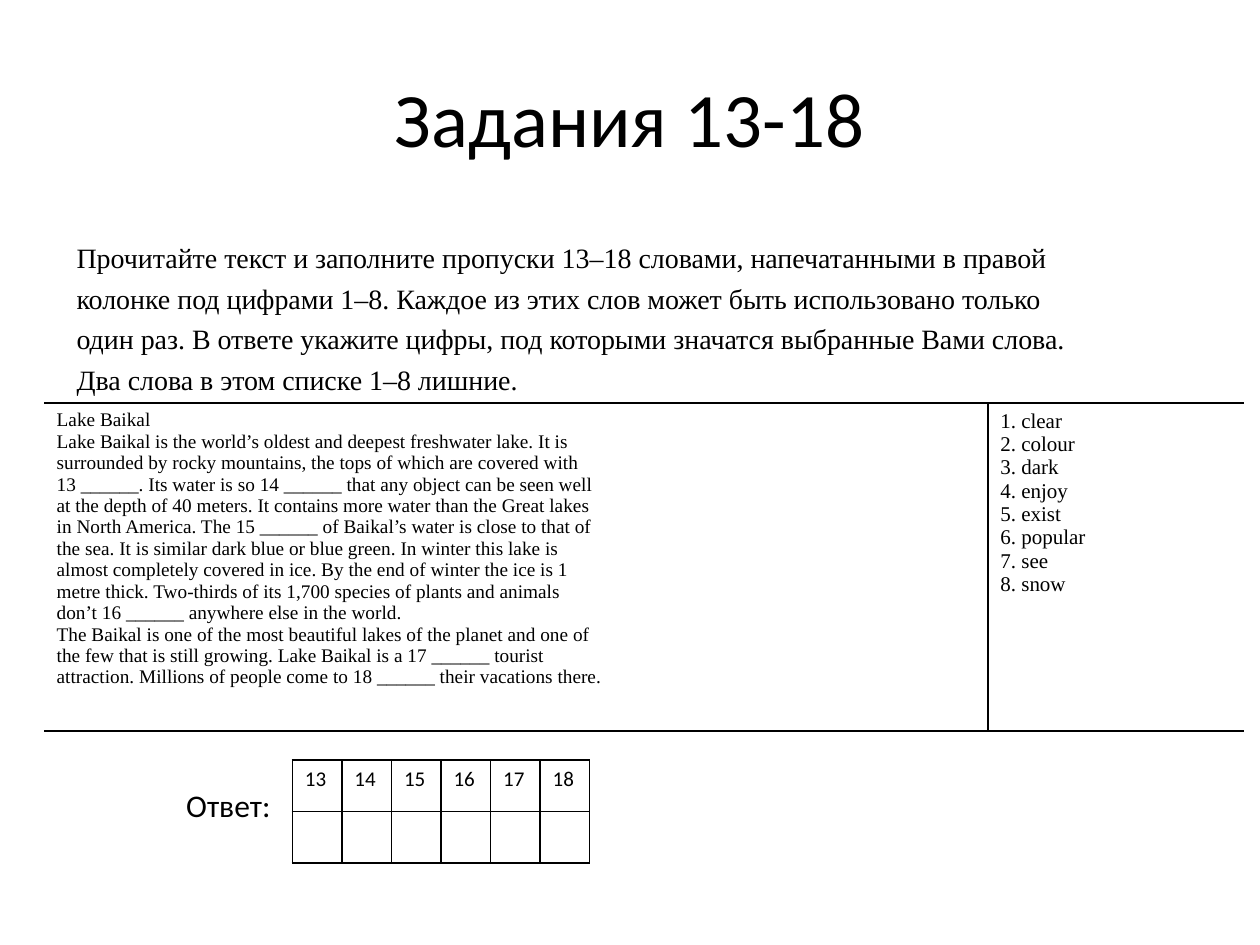
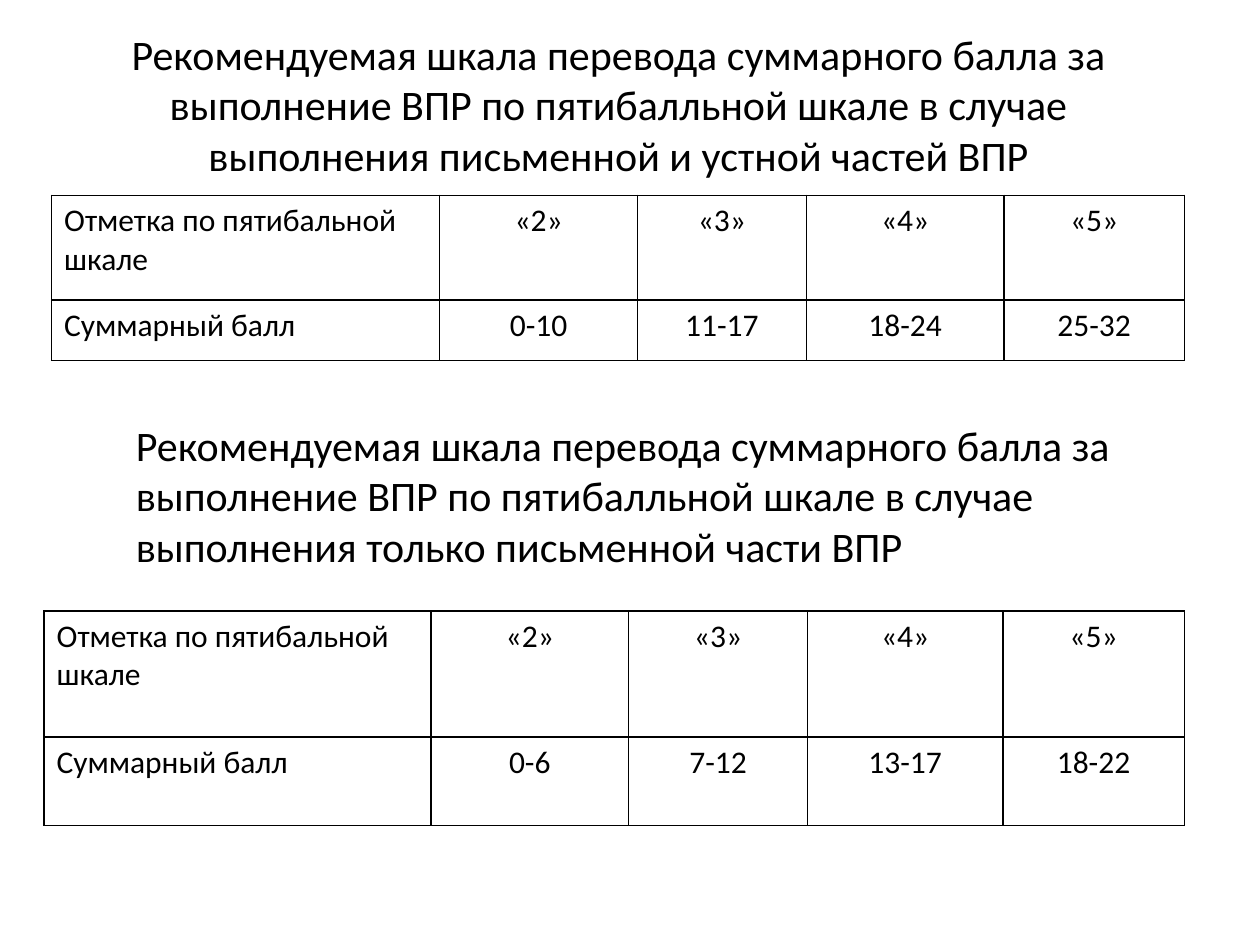
from dataclasses import dataclass
from lxml.etree import SubElement as Sub
from pptx import Presentation
from pptx.dml.color import RGBColor as Rgb
from pptx.enum.text import MSO_ANCHOR as Anchor, PP_ALIGN as Align
from pptx.oxml.ns import qn
from pptx.util import Inches, Pt


@dataclass(frozen=True)
class Theme:
    ink: str = "000000"
    sans: str = "Calibri"
    serif: str = "Times New Roman"
    title: int = 44
    head: int = 24
    label: int = 18
    task: int = 16
    word: int = 12
    story: int = 11
    line: int = 1


THEME = Theme()

TASK = """Прочитайте текст и заполните пропуски 13–18 словами, напечатанными в правой
колонке под цифрами 1–8. Каждое из этих слов может быть использовано только
один раз. В ответе укажите цифры, под которыми значатся выбранные Вами слова.
Два слова в этом списке 1–8 лишние."""

STORY = [
    "Lake Baikal",
    "Lake Baikal is the world’s oldest and deepest freshwater lake. It is",
    "surrounded by rocky mountains, the tops of which are covered with",
    "13 ______. Its water is so 14 ______ that any object can be seen well",
    "at the depth of 40 meters. It contains more water than the Great lakes",
    "in North America. The 15 ______ of Baikal’s water is close to that of",
    "the sea. It is similar dark blue or blue green. In winter this lake is",
    "almost completely covered in ice. By the end of winter the ice is 1",
    "metre thick. Two-thirds of its 1,700 species of plants and animals",
    "don’t 16 ______ anywhere else in the world.",
    "The Baikal is one of the most beautiful lakes of the planet and one of",
    "the few that is still growing. Lake Baikal is a 17 ______ tourist",
    "attraction. Millions of people come to 18 ______ their vacations there.",
]

WORDS = ["clear", "colour", "dark", "enjoy", "exist", "popular", "see", "snow"]
SCALE = ("Рекомендуемая шкала перевода суммарного балла за выполнение ВПР "
         "по пятибалльной шкале в случае выполнения ")


def write(frame, text, size=THEME.label, font=THEME.sans, align=None, gap=0):
    for i, line in enumerate(text.split("\n")):
        para = frame.paragraphs[0] if i == 0 else frame.add_paragraph()
        para.alignment = align
        para.space_before = Pt(gap)
        run = para.add_run()
        run.text = line
        run.font.size = Pt(size)
        run.font.name = font
        run.font.color.rgb = Rgb.from_string(THEME.ink)


class Deck:
    def __init__(self, theme):
        self.theme = theme
        self.prs = Presentation()
        self.prs.slide_width = Inches(10)
        self.prs.slide_height = Inches(7.5)
        self.slide = None

    def page(self):
        self.slide = self.prs.slides.add_slide(self.prs.slide_layouts[6])

    def text(self, box, text, anchor=Anchor.TOP, foot=0.05, **style):
        frame = self.slide.shapes.add_textbox(*map(Inches, box)).text_frame
        frame.word_wrap = True
        frame.vertical_anchor = anchor
        frame.margin_bottom = Inches(foot)
        write(frame, text, **style)

    def title(self, box, text, **style):
        self.text(box, text, anchor=Anchor.MIDDLE, align=Align.CENTER, **style)

    def table(self, left, top, cols, rows):
        area = map(Inches, (left, top, sum(cols), sum(rows)))
        grid = self.slide.shapes.add_table(len(rows), len(cols), *area).table
        grid.first_row = grid.horz_banding = False
        for col, width in zip(grid.columns, cols):
            col.width = Inches(width)
        for row, height in zip(grid.rows, rows):
            row.height = Inches(height)
        return grid

    def edge(self, cell, sides="LRTB"):
        props = cell._tc.get_or_add_tcPr()
        for side in "LRTB":
            line = Sub(props, qn(f"a:ln{side}"), w=str(Pt(self.theme.line)))
            if side in sides:
                fill = Sub(line, qn("a:solidFill"))
                Sub(fill, qn("a:srgbClr"), val=self.theme.ink)
            else:
                Sub(line, qn("a:noFill"))
        cell.fill.background()

    def marks(self, left, top, cols, rows, sums):
        grid = self.table(left, top, cols, rows)
        data = [["Отметка по пятибальной шкале", "«2»", "«3»", "«4»", "«5»"],
                ["Суммарный балл", *sums]]
        for r, row in enumerate(data):
            for c, text in enumerate(row):
                cell = grid.cell(r, c)
                write(cell.text_frame, text, align=Align.CENTER if c else None)
                self.edge(cell)


def tasks(deck):
    theme = deck.theme
    deck.page()
    deck.title((0.5, 0.3, 9, 1.25), "Задания 13-18", size=theme.title)
    deck.text((0.51, 1.86, 9, 1.4), TASK, size=theme.task, font=theme.serif, gap=4)

    lake = deck.table(0.35, 3.2, [4.76, 2.73, 2.03], [2.6])
    write(lake.cell(0, 0).text_frame, "\n".join(STORY), size=theme.story,
          font=theme.serif)
    words = "\n".join(f"{n}. {word}" for n, word in enumerate(WORDS, 1))
    write(lake.cell(0, 2).text_frame, words, size=theme.word, font=theme.serif)
    for col, sides in enumerate(("TB", "TBR", "TBL")):
        deck.edge(lake.cell(0, col), sides)

    deck.text((1.38, 6.19, 5.2, 0.4), "Ответ:")
    reply = deck.table(2.32, 6.03, [2.36 / 6] * 6, [0.41] * 2)
    for col in range(6):
        write(reply.cell(0, col).text_frame, str(13 + col), size=theme.word)
        for row in range(2):
            deck.edge(reply.cell(row, col))


def scales(deck):
    head = deck.theme.head
    deck.page()
    deck.title((0.41, 0.29, 9, 1.42), SCALE + "письменной и устной частей ВПР",
               size=head, foot=0.4)
    deck.marks(0.41, 1.55, [3.08, 1.57, 1.34, 1.57, 1.43], [0.83, 0.48],
               ["0-10", "11-17", "18-24", "25-32"])
    deck.text((0.98, 3.28, 8.43, 1.72), SCALE + "только письменной части ВПР",
              size=head)
    deck.marks(0.35, 4.85, [3.07, 1.57, 1.42, 1.55, 1.44], [1, 0.7],
               ["0-6", "7-12", "13-17", "18-22"])


def main():
    deck = Deck(THEME)
    tasks(deck)
    scales(deck)
    deck.prs.save("out.pptx")


if __name__ == "__main__":
    main()
